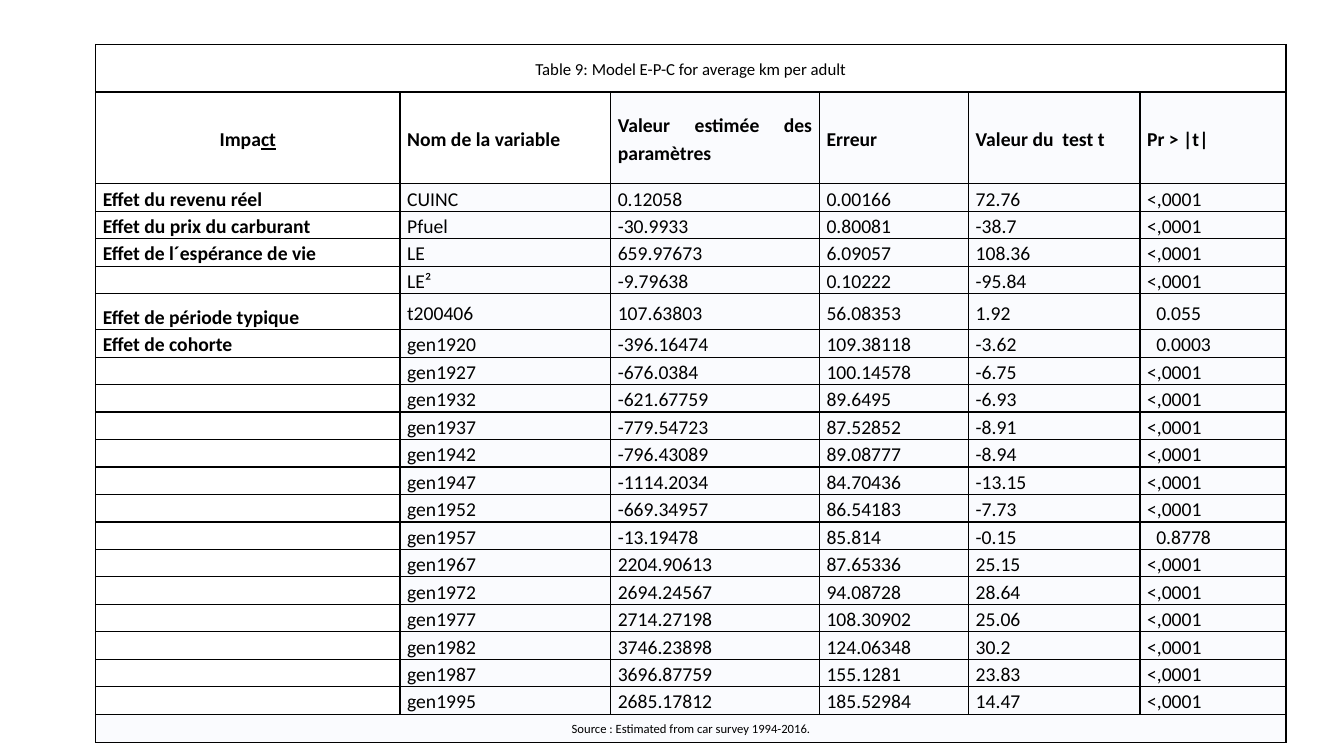
import dataclasses

import lxml.etree
import pptx
import pptx.dml.color
import pptx.enum.text
import pptx.oxml.ns
import pptx.util

Cm = pptx.util.Cm
Pt = pptx.util.Pt
ALIGN = pptx.enum.text.PP_ALIGN
ANCHOR = pptx.enum.text.MSO_ANCHOR
qn = pptx.oxml.ns.qn


@dataclasses.dataclass(frozen=True)
class Theme:
    font: str = "Calibri"
    ink: str = "000000"
    white: str = "FFFFFF"
    tint: str = "FAFBFE"
    title_size: int = 12
    body_size: int = 14
    source_size: int = 9
    border: int = 1
    line_spacing: float = 1.15


TITLE = "Table 9: Model E-P-C for average km per adult"
SOURCE = "Source : Estimated from car survey 1994-2016."
HEADERS = ("Impact", "Nom de la variable", "Valeur estimée des paramètres",
           "Erreur", "Valeur du  test t", "Pr > |t|")
LOW = "<,0001"
ESTIMATES = (
    ("Effet du revenu réel", "CUINC", "0.12058", "0.00166", "72.76", LOW),
    ("Effet du prix du carburant", "Pfuel", "-30.9933", "0.80081", "-38.7", LOW),
    ("Effet de l´espérance de vie", "LE", "659.97673", "6.09057", "108.36", LOW),
    ("", "LE²", "-9.79638", "0.10222", "-95.84", LOW),
    ("Effet de période typique", "t200406", "107.63803", "56.08353", "1.92", "0.055"),
    ("Effet de cohorte", "gen1920", "-396.16474", "109.38118", "-3.62", "0.0003"),
    ("", "gen1927", "-676.0384", "100.14578", "-6.75", LOW),
    ("", "gen1932", "-621.67759", "89.6495", "-6.93", LOW),
    ("", "gen1937", "-779.54723", "87.52852", "-8.91", LOW),
    ("", "gen1942", "-796.43089", "89.08777", "-8.94", LOW),
    ("", "gen1947", "-1114.2034", "84.70436", "-13.15", LOW),
    ("", "gen1952", "-669.34957", "86.54183", "-7.73", LOW),
    ("", "gen1957", "-13.19478", "85.814", "-0.15", "0.8778"),
    ("", "gen1967", "2204.90613", "87.65336", "25.15", LOW),
    ("", "gen1972", "2694.24567", "94.08728", "28.64", LOW),
    ("", "gen1977", "2714.27198", "108.30902", "25.06", LOW),
    ("", "gen1982", "3746.23898", "124.06348", "30.2", LOW),
    ("", "gen1987", "3696.87759", "155.1281", "23.83", LOW),
    ("", "gen1995", "2685.17812", "185.52984", "14.47", LOW),
)
COLUMN_WIDTHS = (7.67, 5.31, 5.26, 3.76, 4.32, 3.68)
TITLE_HEIGHT, HEADER_HEIGHT, ROW_HEIGHT = 1.2, 2.31, 0.69
PERIOD_HEIGHT, SOURCE_HEIGHT = 0.91, 0.72
PADDING, P_VALUE_PADDING = 0.18, 0.41


class Deck:
    def __init__(self, theme):
        self.theme = theme
        self.prs = pptx.Presentation()
        self.prs.slide_width = Cm(33.87)
        self.prs.slide_height = Cm(19.05)
        self.s = self.prs.slides.add_slide(self.prs.slide_layouts[6])

    def table(self, left, top, widths, heights):
        sp = self.s.shapes.add_table(len(heights), len(widths), Cm(left), Cm(top),
                                     Cm(sum(widths)), Cm(sum(heights)))
        table = sp.table
        table.first_row = table.horz_banding = False
        for column, width in zip(table.columns, widths):
            column.width = Cm(width)
        for row, height in zip(table.rows, heights):
            row.height = Cm(height)
        for cell in table.iter_cells():
            self.borders(cell)
        return table

    def borders(self, cell):
        tc_pr = cell._tc.get_or_add_tcPr()
        for side in ("lnL", "lnR", "lnT", "lnB"):
            line = lxml.etree.SubElement(tc_pr, qn(f"a:{side}"),
                                         w=str(Pt(self.theme.border)))
            fill = lxml.etree.SubElement(line, qn("a:solidFill"))
            lxml.etree.SubElement(fill, qn("a:srgbClr"), val=self.theme.ink)

    def cell(self, cell, texts, fill, size, bold=False, align=ALIGN.JUSTIFY,
             anchor=ANCHOR.MIDDLE, padding=PADDING):
        cell.fill.solid()
        cell.fill.fore_color.rgb = pptx.dml.color.RGBColor.from_string(fill)
        cell.vertical_anchor = anchor
        cell.margin_left, cell.margin_right = Cm(padding), Cm(PADDING)
        cell.margin_top = cell.margin_bottom = 0
        p = cell.text_frame.paragraphs[0]
        p.alignment = align
        p.line_spacing = self.theme.line_spacing
        for text in filter(None, texts):
            r = p.add_run()
            r.text = text
            r.font.name = self.theme.font
            r.font.size = Pt(size)
            r.font.bold = bold
            r.font.color.rgb = pptx.dml.color.RGBColor.from_string(self.theme.ink)
        if not p.runs:
            lxml.etree.SubElement(p._p, qn("a:endParaRPr"), sz=str(size * 100))
        return p

    def banner(self, table, row, text, fill, size):
        first = table.cell(row, 0)
        first.merge(table.cell(row, len(table.columns) - 1))
        self.cell(first, [text], fill, size, align=ALIGN.CENTER)

    def save(self):
        self.prs.save("out.pptx")


def main():
    theme = Theme()
    deck = Deck(theme)
    body_heights = [PERIOD_HEIGHT if row[1] == "t200406" else ROW_HEIGHT
                    for row in ESTIMATES]
    heights = [TITLE_HEIGHT, HEADER_HEIGHT, *body_heights, SOURCE_HEIGHT]
    table = deck.table(2.41, 1.12, COLUMN_WIDTHS, heights)

    deck.banner(table, 0, TITLE, theme.white, theme.title_size)
    deck.banner(table, len(heights) - 1, SOURCE, theme.tint, theme.source_size)

    p = deck.cell(table.cell(1, 0), [HEADERS[0][:-2], HEADERS[0][-2:]], theme.white,
                  theme.body_size, bold=True, align=ALIGN.CENTER)
    p.runs[1].font.underline = True
    for col, header in enumerate(HEADERS[1:], 1):
        fill = theme.white if col == 1 else theme.tint
        deck.cell(table.cell(1, col), [header], fill, theme.body_size, bold=True)

    for row, (effect, *values) in enumerate(ESTIMATES, 2):
        deck.cell(table.cell(row, 0), [effect], theme.white, theme.body_size,
                  bold=True, align=ALIGN.LEFT, anchor=ANCHOR.BOTTOM)
        for col, value in enumerate(values, 1):
            exact = col == len(values) and value != LOW
            deck.cell(table.cell(row, col), [value], theme.tint, theme.body_size,
                      padding=P_VALUE_PADDING if exact else PADDING)

    deck.save()


if __name__ == "__main__":
    main()
